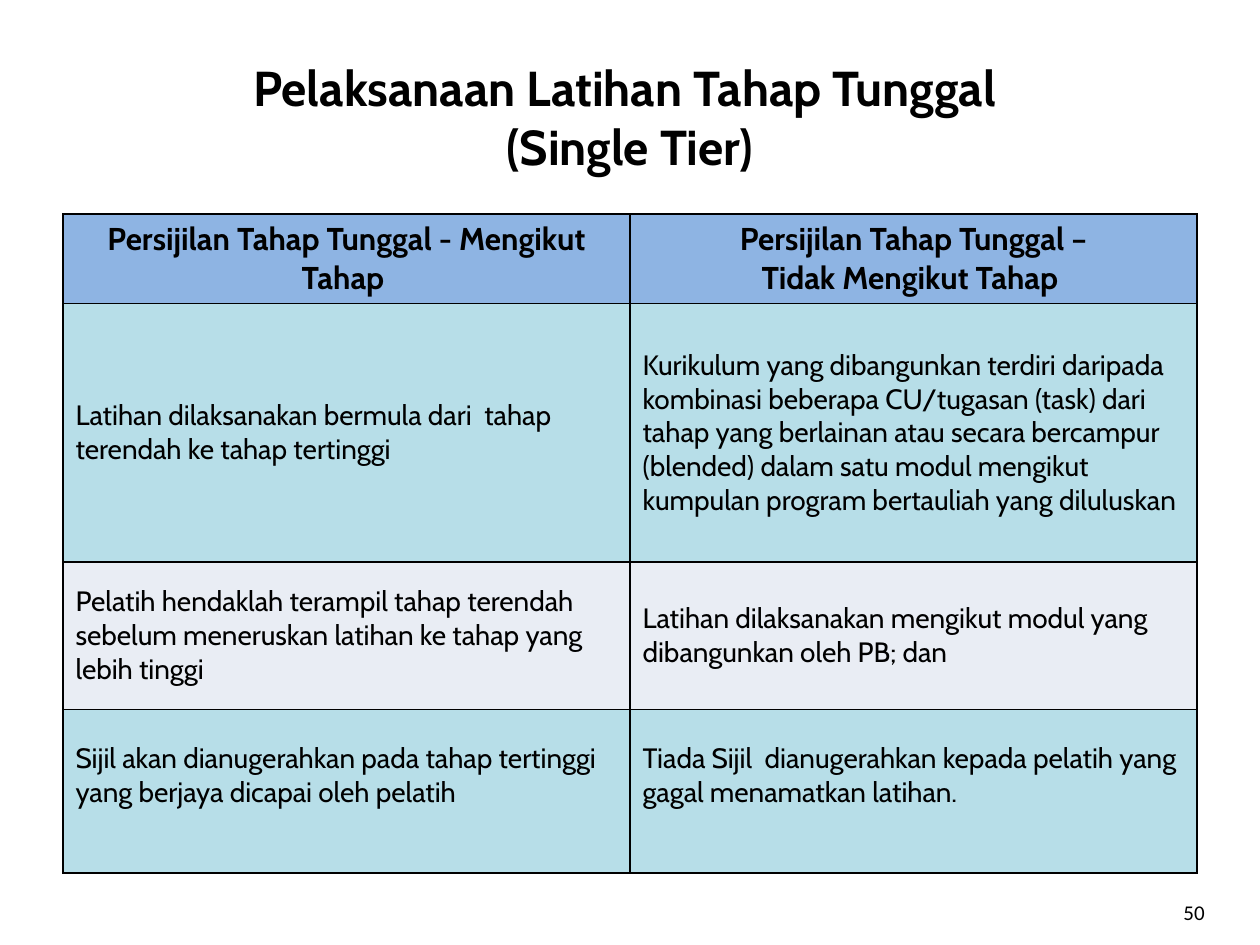
"""Build the slide that compares two ways of single-tier training."""
from dataclasses import dataclass

import lxml.etree
import pptx
import pptx.dml.color
import pptx.enum.text
import pptx.oxml.ns
import pptx.util
from pptx.util import Inches

ALIGN = pptx.enum.text.PP_ALIGN
ANCHOR = pptx.enum.text.MSO_ANCHOR
BLACK = "000000"


@dataclass(frozen=True)
class Style:
    size: int
    font: str = "Cabin"
    bold: bool = False
    align: ALIGN = ALIGN.LEFT


@dataclass(frozen=True)
class Row:
    height: float
    fill: str
    stepwise: str
    modular: str
    style: Style = Style(16)
    anchor: ANCHOR = ANCHOR.MIDDLE
    bottom: float = 0.05


TITLE = Style(28, bold=True, align=ALIGN.CENTER)
HEADER = Style(18, bold=True, align=ALIGN.CENTER)
PAGE = Style(12, "Calibri", align=ALIGN.RIGHT)

ROWS = [
    Row(0.7, "8EB4E3",
        "Persijilan Tahap Tunggal - Mengikut Tahap ",
        " Persijilan Tahap Tunggal – \nTidak Mengikut Tahap ",
        HEADER, ANCHOR.TOP),
    Row(2.05, "B7DEE8",
        "Latihan dilaksanakan bermula dari  tahap terendah ke tahap tertinggi",
        "Kurikulum yang dibangunkan terdiri daripada kombinasi beberapa "
        "CU/tugasan (task) dari tahap yang berlainan atau secara bercampur "
        "(blended) dalam satu modul mengikut kumpulan program bertauliah "
        "yang diluluskan"),
    Row(1.17, "E9EDF4",
        "Pelatih hendaklah terampil tahap terendah sebelum meneruskan latihan "
        "ke tahap yang lebih tinggi",
        "Latihan dilaksanakan mengikut modul yang dibangunkan oleh PB; dan"),
    Row(1.3, "B7DEE8",
        "Sijil akan dianugerahkan pada tahap tertinggi yang berjaya dicapai "
        "oleh pelatih",
        "Tiada Sijil  dianugerahkan kepada pelatih yang gagal menamatkan "
        "latihan.",
        bottom=0.3),
]


def color(value: str) -> pptx.dml.color.RGBColor:
    return pptx.dml.color.RGBColor.from_string(value)


def add_run(paragraph, words: str, style: Style) -> None:
    paragraph.alignment = style.align
    run = paragraph.add_run()
    run.text = words
    run.font.size = pptx.util.Pt(style.size)
    run.font.name = style.font
    run.font.bold = style.bold
    run.font.color.rgb = color(BLACK)


def write(frame, words: str, style: Style) -> None:
    frame.word_wrap = True
    for index, line in enumerate(words.split("\n")):
        paragraph = frame.add_paragraph() if index else frame.paragraphs[0]
        add_run(paragraph, line, style)


def draw_borders(cell, width: float = 1) -> None:
    properties = cell._tc.get_or_add_tcPr()
    qn = pptx.oxml.ns.qn
    for position, side in enumerate(("lnL", "lnR", "lnT", "lnB")):
        line = lxml.etree.Element(qn(f"a:{side}"), w=str(pptx.util.Pt(width)))
        fill = lxml.etree.SubElement(line, qn("a:solidFill"))
        lxml.etree.SubElement(fill, qn("a:srgbClr"), val=BLACK)
        properties.insert(position, line)


def fill_cell(cell, words: str, row: Row) -> None:
    cell.margin_left = cell.margin_right = Inches(0.1)
    cell.margin_top, cell.margin_bottom = Inches(0.05), Inches(row.bottom)
    cell.vertical_anchor = row.anchor
    cell.fill.solid()
    cell.fill.fore_color.rgb = color(row.fill)
    draw_borders(cell)
    write(cell.text_frame, words, row.style)


def add_title(slide) -> None:
    title = slide.shapes.title
    title.left, title.top = Inches(0.5), Inches(0.3)
    title.width, title.height = Inches(9), Inches(1.25)
    frame = title.text_frame
    frame.auto_size = pptx.enum.text.MSO_AUTO_SIZE.NONE
    frame.vertical_anchor = ANCHOR.MIDDLE
    frame.word_wrap = True
    heading = frame.paragraphs[0]
    add_run(heading, "Pelaksanaan Latihan Tahap Tunggal ", TITLE)
    heading.add_line_break()
    add_run(heading, "(Single Tier)", TITLE)


def add_comparison(slide) -> None:
    height = sum(row.height for row in ROWS)
    comparison = slide.shapes.add_table(
        len(ROWS), 2, Inches(0.5), Inches(1.7), Inches(9), Inches(height)).table
    for index, row in enumerate(ROWS):
        comparison.rows[index].height = Inches(row.height)
        for column, words in enumerate((row.stepwise, row.modular)):
            fill_cell(comparison.cell(index, column), words, row)


def add_page_number(slide) -> None:
    page_number = slide.shapes.add_textbox(
        Inches(7.33), Inches(6.98), Inches(2.33), Inches(0.52))
    page_number.text_frame.vertical_anchor = ANCHOR.MIDDLE
    write(page_number.text_frame, "50", PAGE)


def main() -> None:
    deck = pptx.Presentation()
    deck.slide_width, deck.slide_height = Inches(10), Inches(7.5)
    slide = deck.slides.add_slide(deck.slide_layouts.get_by_name("Title Only"))
    add_title(slide)
    add_comparison(slide)
    add_page_number(slide)
    deck.save("out.pptx")


if __name__ == "__main__":
    main()
